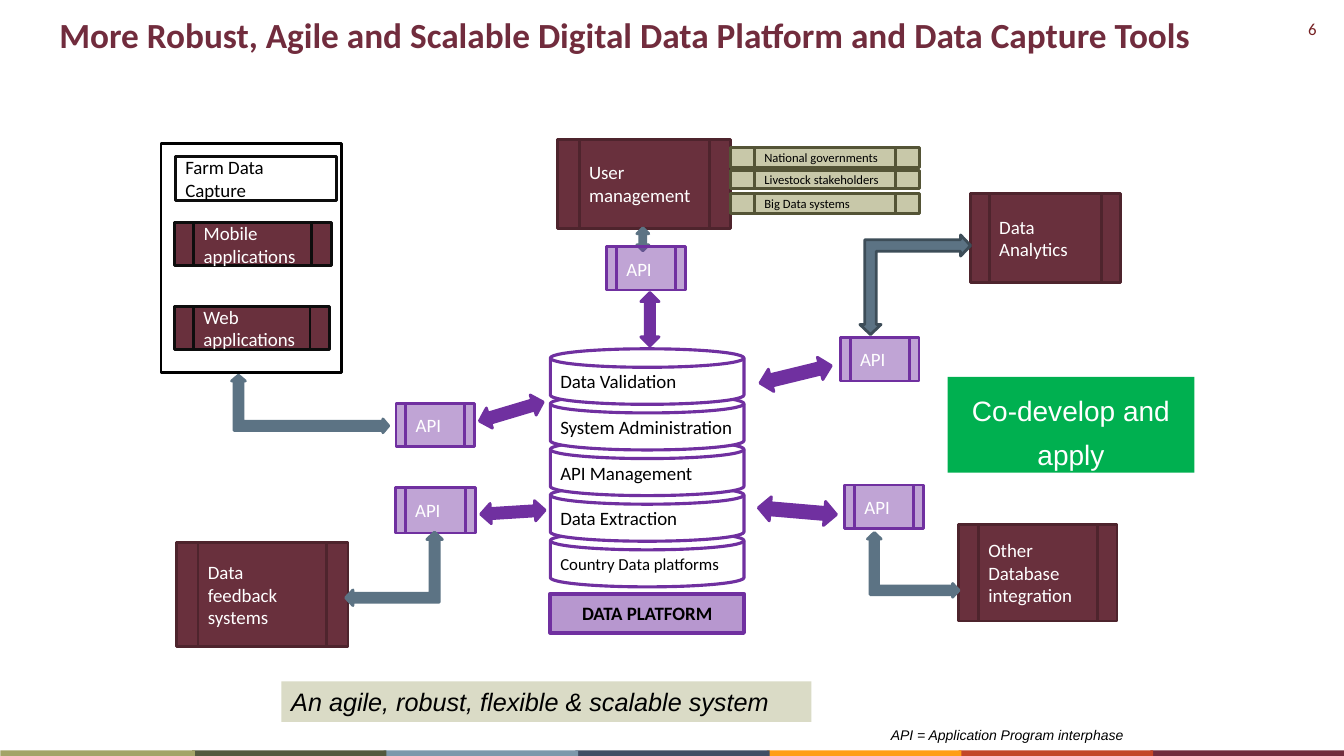
from dataclasses import dataclass
from typing import Optional

from lxml import etree
from pptx import Presentation
from pptx.dml.color import RGBColor
from pptx.enum.shapes import MSO_SHAPE
from pptx.enum.text import MSO_ANCHOR, PP_ALIGN
from pptx.oxml.ns import qn
from pptx.util import Cm, Pt

RECT = MSO_SHAPE.RECTANGLE
PROCESS = MSO_SHAPE.FLOWCHART_PREDEFINED_PROCESS
DISK = MSO_SHAPE.FLOWCHART_MAGNETIC_DISK
TWO_WAY = MSO_SHAPE.UP_DOWN_ARROW
ELBOW = MSO_SHAPE.LEFT_UP_ARROW
LEFT, CENTER, RIGHT = PP_ALIGN.LEFT, PP_ALIGN.CENTER, PP_ALIGN.RIGHT
TOP, MIDDLE = MSO_ANCHOR.TOP, MSO_ANCHOR.MIDDLE


@dataclass(frozen=True)
class Theme:
    font: str = "Calibri"
    caption_font: str = "Arial"
    title: str = "712C3D"
    number: str = "762123"
    white: str = "FFFFFF"
    black: str = "000000"
    near_black: str = "0D0D0D"
    purple: str = "7030A0"
    maroon: str = "69303D"
    maroon_edge: str = "4E242D"
    slate: str = "5C7384"
    slate_edge: str = "3D4D58"
    olive: str = "C8C8A9"
    olive_edge: str = "545436"
    tagline: str = "DADBC6"
    green: str = "00B050"
    stripes: tuple = ("A3A467", "53593E", "7C98AB", "404E65", "FF9E16", "C34628", "712C3D")
    title_size: float = 25.2
    body_size: float = 13.5
    small_size: float = 12
    tiny_size: float = 9
    note_size: float = 10
    tagline_size: float = 18
    callout_size: float = 20


THEME = Theme()


@dataclass(frozen=True)
class Words:
    text: str
    color: str = THEME.black
    size: float = THEME.body_size
    font: str = THEME.font
    bold: bool = False
    italic: bool = False
    align: PP_ALIGN = LEFT
    anchor: MSO_ANCHOR = MIDDLE
    spacing: Optional[float] = None


@dataclass(frozen=True)
class Part:
    kind: MSO_SHAPE
    box: tuple[float, float, float, float]  # left, top, width, height in cm
    fill: Optional[str] = None
    line: Optional[str] = None
    words: Optional[Words] = None
    rotation: float = 0
    weight: float = 2
    alpha: Optional[int] = None  # opacity in percent
    adjust: tuple[float, ...] = ()


def write(frame, words: Words) -> None:
    frame.word_wrap = True
    frame.vertical_anchor = words.anchor
    paragraph = frame.paragraphs[0]
    paragraph.text = words.text
    paragraph.alignment = words.align
    if words.spacing:
        paragraph.line_spacing = Pt(words.spacing)
    font = paragraph.font
    font.name, font.size = words.font, Pt(words.size)
    font.bold, font.italic = words.bold, words.italic
    font.color.rgb = RGBColor.from_string(words.color)


def draw(slide, part: Part) -> None:
    shape = slide.shapes.add_shape(part.kind, *map(Cm, part.box))
    shape.shadow.inherit = False
    shape.rotation = part.rotation
    for index, value in enumerate(part.adjust):
        shape.adjustments[index] = value
    if part.fill:
        shape.fill.solid()
        shape.fill.fore_color.rgb = RGBColor.from_string(part.fill)
    else:
        shape.fill.background()
    if part.alpha:
        color = shape.element.spPr.find(qn("a:solidFill")).find(qn("a:srgbClr"))
        etree.SubElement(color, qn("a:alpha")).set("val", str(part.alpha * 1000))
    if part.line:
        shape.line.color.rgb = RGBColor.from_string(part.line)
        shape.line.width = Pt(part.weight)
    else:
        shape.line.fill.background()
    if part.words:
        write(shape.text_frame, part.words)
        if part.kind == DISK:
            shape.text_frame.margin_right = Cm(0.1)


def draw_text(slide, box: tuple[float, float, float, float], words: Words) -> None:
    write(slide.shapes.add_textbox(*map(Cm, box)).text_frame, words)


def module(text: str, *box: float, edge: str = THEME.maroon_edge) -> Part:
    return Part(PROCESS, box, THEME.maroon, edge, Words(text, THEME.white))


def api(left: float, top: float, width: float = 1.98, height: float = 1.09) -> Part:
    return Part(PROCESS, (left, top, width, height), THEME.purple, THEME.purple,
                Words("API", THEME.white), alpha=44)


def data_arrow(*box: float, rotation: float = 0) -> Part:
    return Part(TWO_WAY, box, THEME.purple, THEME.purple, rotation=rotation)


def elbow(*box: float, rotation: float = 0, shaft: float, edge: str = THEME.slate,
          head: float = 0.106) -> Part:
    return Part(ELBOW, box, THEME.slate, edge, rotation=rotation, adjust=(shaft, head, 0.101))


def user_group(text: str, top: float, height: float) -> Part:
    return Part(PROCESS, (18.42, top, 4.75, height), THEME.olive, THEME.olive_edge,
                Words(text, size=THEME.tiny_size))


# Footer stripes, right to left so that each overlaps its right neighbour
STRIPES = [Part(RECT, (0.01 + 4.83 * i, 18.91, 4.9, 0.15), color)
           for i, color in reversed(list(enumerate(THEME.stripes)))]

# Platform layers, stacked from the bottom up
LAYERS = ["Country Data platforms", "Data Extraction", "API Management",
          "System Administration", "Data Validation"]
PLATFORM = [Part(DISK, (13.87, 13.39 - 1.15 * i, 4.88, 1.4), THEME.white, THEME.purple,
                 Words(layer, size=THEME.body_size if i else THEME.small_size), weight=2.25)
            for i, layer in enumerate(LAYERS)]

DIAGRAM = [
    # Connected systems
    module("User management", 14.05, 3.51, 4.37, 2.24),
    module("Data Analytics", 24.46, 4.88, 3.78, 2.24),
    module("Other Database integration", 24.16, 13.21, 3.99, 2.44),
    module("Data feedback systems", 4.45, 13.67, 4.32, 2.62),
    api(9.96, 12.29, 2.03, 1.14),
    api(9.98, 10.16),
    # Links between the platform and its APIs
    data_arrow(16.15, 7.37, 0.46, 1.35),
    data_arrow(12.62, 9.53, 0.53, 1.68, rotation=253.4),
    data_arrow(12.67, 12.09, 0.51, 1.63, rotation=266.4),
    data_arrow(19.79, 11.89, 0.61, 1.98, rotation=94.9),
    data_arrow(19.76, 8.51, 0.58, 1.85, rotation=76.3),
    # Farm data capture
    Part(RECT, (4.06, 3.61, 4.55, 5.77), THEME.white, THEME.black),
    module("Mobile applications", 4.39, 5.61, 3.96, 1.09, edge=THEME.near_black),
    module("Web applications", 4.39, 7.72, 3.91, 1.09, edge=THEME.near_black),
    Part(RECT, (4.42, 3.94, 4.06, 1.12), None, THEME.near_black, Words("Farm Data Capture")),
    # Links between the APIs and the systems
    elbow(7.09, 8.2, 1.45, 3.96, rotation=90, shaft=0.158, head=0.12),
    elbow(8.71, 13.41, 2.44, 1.85, shaft=0.125),
    elbow(22.2, 13.08, 1.63, 2.31, rotation=90, shaft=0.132),
    elbow(21.67, 5.92, 2.79, 2.51, rotation=180, shaft=0.116, edge=THEME.slate_edge),
    Part(TWO_WAY, (16.05, 5.74, 0.3, 0.58), THEME.slate, THEME.slate),
    # User groups and remaining APIs
    user_group("National governments", 3.71, 0.51),
    user_group("Livestock stakeholders", 4.29, 0.46),
    user_group("Big Data systems", 4.88, 0.51),
    api(15.29, 6.22),
    api(21.18, 8.51),
    api(21.29, 12.22),
    # Captions
    Part(RECT, (13.87, 14.96, 4.88, 0.99), THEME.purple, THEME.purple,
         Words("DATA PLATFORM", bold=True, align=CENTER), weight=2.75, alpha=50),
    Part(RECT, (7.09, 17.17, 13.36, 1.02), THEME.tagline,
         words=Words("An agile, robust, flexible & scalable system", size=THEME.tagline_size,
                     font=THEME.caption_font, italic=True, anchor=TOP)),
    Part(RECT, (23.88, 9.5, 6.22, 2.41), THEME.green,
         words=Words("Co-develop and apply", THEME.white, THEME.callout_size,
                     THEME.caption_font, align=CENTER, anchor=TOP, spacing=32)),
]


def main() -> None:
    deck = Presentation()
    deck.slide_width, deck.slide_height = Cm(33.87), Cm(19.05)
    slide = deck.slides.add_slide(deck.slide_layouts[5])

    # Title and page number
    title = slide.shapes.title
    title.left, title.top, title.width, title.height = map(Cm, (1.24, 0.2, 30.73, 1.88))
    write(title.text_frame,
          Words("More Robust, Agile and Scalable Digital Data Platform and Data Capture Tools",
                THEME.title, THEME.title_size, bold=True, anchor=TOP))
    draw_text(slide, (31.65, 0.36, 1.78, 0.76),
              Words("6", THEME.number, THEME.small_size, align=RIGHT, anchor=TOP))

    for part in STRIPES + PLATFORM + DIAGRAM:
        draw(slide, part)

    # Abbreviation note
    draw_text(slide, (22.2, 18.19, 6.48, 0.69),
              Words("API = Application Program interphase", size=THEME.note_size,
                    font=THEME.caption_font, italic=True, anchor=TOP))
    deck.save("out.pptx")


if __name__ == "__main__":
    main()
